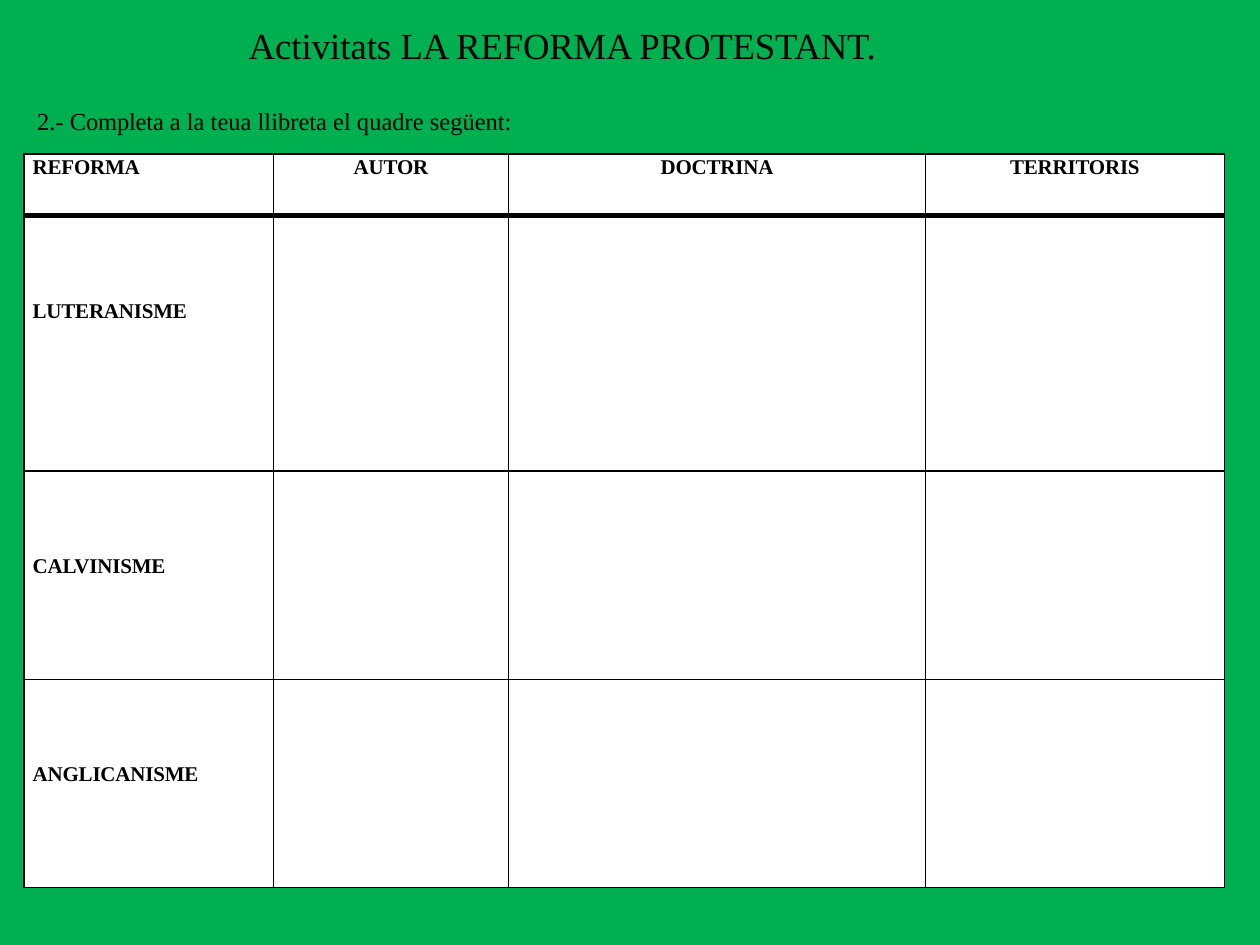
from lxml import etree
from pptx import Presentation
from pptx.dml.color import RGBColor
from pptx.enum.text import PP_ALIGN
from pptx.oxml.ns import qn
from pptx.util import Pt

GREEN = RGBColor(0x00, 0xAF, 0x50)
WHITE = RGBColor(0xFF, 0xFF, 0xFF)
BLACK = RGBColor(0x00, 0x00, 0x00)
LEFT, CENTER = PP_ALIGN.LEFT, PP_ALIGN.CENTER
FONT = "Times New Roman"


def add_run(p, text, size, bold=False, spacing=0):
    r = p.add_run()
    r.text = text
    for name, value in {"name": FONT, "size": Pt(size), "bold": bold}.items():
        setattr(r.font, name, value)
    r.font.color.rgb = BLACK
    if spacing:
        r.font._element.set("spc", str(spacing))


def add_border(cell, side, width):
    tcPr = cell._tc.get_or_add_tcPr()
    ln = etree.SubElement(tcPr, qn("a:ln" + side), w=str(Pt(width)))
    fill = etree.SubElement(ln, qn("a:solidFill"))
    etree.SubElement(fill, qn("a:srgbClr"), val=str(BLACK))


prs = Presentation()
prs.slide_width, prs.slide_height = Pt(720), Pt(540)
s = prs.slides.add_slide(prs.slide_layouts[6])
s.background.fill.solid()
s.background.fill.fore_color.rgb = GREEN

# Title and instruction: position, size, runs with their letter spacing
texts = [
    ((141.1, 10.8, 439.2, 27.4), 21,
     [("Activitats ", 0), ("LA REFORMA PROTESTANT.", -10)]),
    ((20.2, 58.3, 274.3, 18), 14,
     [("2.- ", 0), ("Completa ", -10), ("a la teua llibreta el quadre següent:", 0)]),
]
for box, size, runs in texts:
    tf = s.shapes.add_textbox(*[Pt(v) for v in box]).text_frame
    tf.word_wrap = True
    margins = {"margin_left": 1, "margin_top": 2, "margin_right": 0, "margin_bottom": 0}
    for name, value in margins.items():
        setattr(tf, name, Pt(value))
    for text, spacing in runs:
        add_run(tf.paragraphs[0], text, size, spacing=spacing)

# Table grid
col_widths = [142.5, 134.5, 238.2, 170.8]
row_heights = [35.4, 145.9, 119, 119]
rows = [
    ["REFORMA", "AUTOR", "DOCTRINA", "TERRITORIS"],
    ["LUTERANISME"],
    ["CALVINISME"],
    ["ANGLICANISME"],
]
table = s.shapes.add_table(len(rows), len(col_widths), Pt(13.7), Pt(87.9),
                           Pt(sum(col_widths)), Pt(sum(row_heights))).table
table.first_row = table.horz_banding = False
for col, width in zip(table.columns, col_widths):
    col.width = Pt(width)
for row, height in zip(table.rows, row_heights):
    row.height = Pt(height)

# Cells: borders with a thick rule under the header, white fill, labels
for i, labels in enumerate(rows):
    for j in range(len(col_widths)):
        cell = table.cell(i, j)
        widths = {"L": 1, "R": 1, "T": 3 if i == 1 else 1, "B": 3 if i == 0 else 1}
        for side, width in widths.items():
            add_border(cell, side, width)
        cell.fill.solid()
        cell.fill.fore_color.rgb = WHITE
        margins = {"margin_left": 5 if j == 0 else 0, "margin_top": 1 if i == 0 else 48,
                   "margin_right": 0, "margin_bottom": 0}
        for name, value in margins.items():
            setattr(cell, name, Pt(value))
        if j < len(labels):
            p = cell.text_frame.paragraphs[0]
            p.alignment = LEFT if j == 0 else CENTER
            add_run(p, labels[j], 12, bold=True, spacing=-10)

prs.save("out.pptx")
